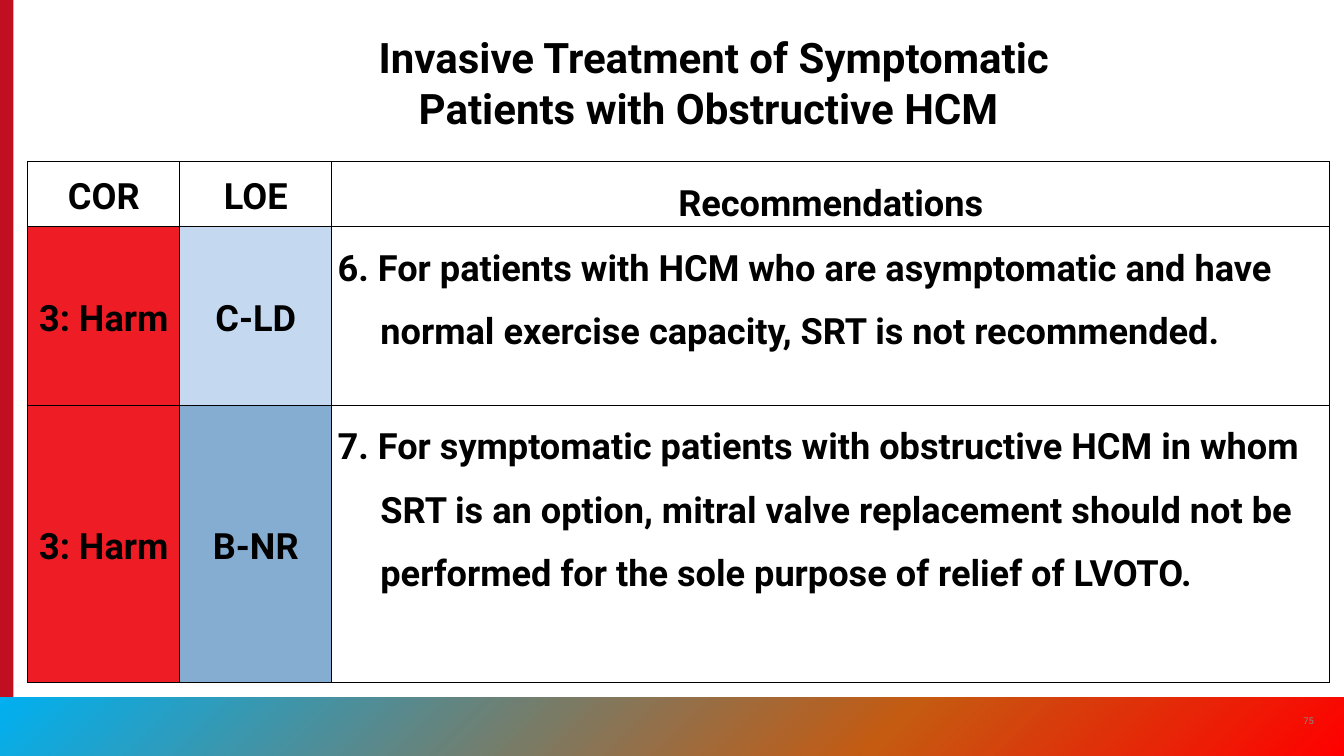
import copy

import pptx
import pptx.dml.color
import pptx.enum.dml
import pptx.enum.shapes
import pptx.enum.text
import pptx.oxml
import pptx.oxml.ns
import pptx.util

Inches = pptx.util.Inches
RGBColor = pptx.dml.color.RGBColor
ALIGN = pptx.enum.text.PP_ALIGN
ANCHOR = pptx.enum.text.MSO_ANCHOR
RECTANGLE = pptx.enum.shapes.MSO_SHAPE.RECTANGLE

BLACK = RGBColor(0x00, 0x00, 0x00)
GRAY = RGBColor(0x8A, 0x8B, 0x8A)
CRIMSON = RGBColor(0xC1, 0x0E, 0x21)
HARM_RED = RGBColor(0xEE, 0x1C, 0x25)
PALE_BLUE = RGBColor(0xC4, 0xD9, 0xF0)
MID_BLUE = RGBColor(0x85, 0xAD, 0xD1)
GRADIENT = [
    (0, RGBColor(0x00, 0xB0, 0xF0)),
    (0.66, RGBColor(0xC5, 0x5A, 0x11)),
    (1, RGBColor(0xFF, 0x00, 0x00)),
]


def write_text(frame, text, size=31, color=BLACK, bold=True, align=ALIGN.CENTER,
               spacing=1.0, left=0, hanging=0):
    frame.word_wrap = True
    paragraph = frame.paragraphs[0]
    paragraph.alignment = align
    paragraph.line_spacing = spacing
    properties = paragraph._p.get_or_add_pPr()
    properties.set("marL", str(Inches(left)))
    properties.set("indent", str(-Inches(hanging)))
    run = paragraph.add_run()
    run.text = text
    run.font.name = "Roboto"
    run.font.size = pptx.util.Pt(size)
    run.font.bold = bold
    run.font.color.rgb = color


def set_borders(cell):
    properties = cell._tc.get_or_add_tcPr()
    for side in ("lnL", "lnR", "lnT", "lnB"):
        properties.append(pptx.oxml.parse_xml(
            f'<a:{side} {pptx.oxml.ns.nsdecls("a")} w="12700"><a:solidFill>'
            f'<a:srgbClr val="{BLACK}"/></a:solidFill></a:{side}>'))


presentation = pptx.Presentation()
presentation.slide_width = Inches(16)
presentation.slide_height = Inches(9)
slide = presentation.slides.add_slide(presentation.slide_layouts[6])

# Left stripe
stripe = slide.shapes.add_shape(RECTANGLE, 0, 0, Inches(0.16), Inches(9))
stripe.shadow.inherit = False
stripe.fill.solid()
stripe.fill.fore_color.rgb = CRIMSON
stripe.line.fill.background()

# Gradient footer band
band = slide.shapes.add_shape(RECTANGLE, 0, Inches(8.3), Inches(16), Inches(0.7))
band.shadow.inherit = False
band.line.fill.background()
band.fill.gradient()
band.fill.gradient_angle = 315
stop_list = band._element.spPr.find(".//" + pptx.oxml.ns.qn("a:gsLst"))
stop_list.append(copy.deepcopy(stop_list[0]))
for stop, (position, color) in zip(band.fill.gradient_stops, GRADIENT):
    stop.position = position
    stop.color.rgb = color

# Slide number
number = slide.shapes.add_textbox(Inches(15.34), Inches(8.34), Inches(0.48), Inches(0.48))
number.text_frame.vertical_anchor = ANCHOR.MIDDLE
write_text(number.text_frame, "75", size=8, color=GRAY, bold=False)

# Recommendations table
rows = [
    ("COR", "LOE", "Recommendations"),
    ("3: Harm", "C-LD", "6. For patients with HCM who are asymptomatic and have normal "
     "exercise capacity, SRT is not recommended."),
    ("3: Harm", "B-NR", "7. For symptomatic patients with obstructive HCM in whom SRT is "
     "an option, mitral valve replacement should not be performed for the sole purpose "
     "of relief of LVOTO."),
]
fills = {"3: Harm": HARM_RED, "C-LD": PALE_BLUE, "B-NR": MID_BLUE}
table = slide.shapes.add_table(3, 3, Inches(0.33), Inches(1.92),
                               Inches(15.5), Inches(6.08)).table
table.first_row = False
table.horz_banding = False
for column, width in zip(table.columns, (1.81, 1.81, 11.88)):
    column.width = Inches(width)
for row, height in zip(table.rows, (0.65, 2.13, 3.3)):
    row.height = Inches(height)

for row_index, texts in enumerate(rows):
    for column_index, text in enumerate(texts):
        cell = table.cell(row_index, column_index)
        cell.margin_left = cell.margin_right = Inches(0.07)
        cell.margin_top = cell.margin_bottom = 0
        set_borders(cell)
        if text in fills:
            cell.fill.solid()
            cell.fill.fore_color.rgb = fills[text]
        else:
            cell.fill.background()
        spacing = 1.5 if column_index == 2 else 1.15
        if row_index > 0 and column_index == 2:
            cell.vertical_anchor = ANCHOR.TOP
            write_text(cell.text_frame, text, align=ALIGN.LEFT, spacing=spacing,
                       left=0.51, hanging=0.51)
        else:
            cell.vertical_anchor = ANCHOR.MIDDLE
            write_text(cell.text_frame, text, spacing=spacing)

# Title
title = slide.shapes.add_textbox(Inches(2.49), Inches(0.33), Inches(11.02), Inches(1.31))
write_text(title.text_frame,
           "Invasive Treatment of Symptomatic Patients with Obstructive HCM ",
           size=36, left=1)

presentation.save("out.pptx")
